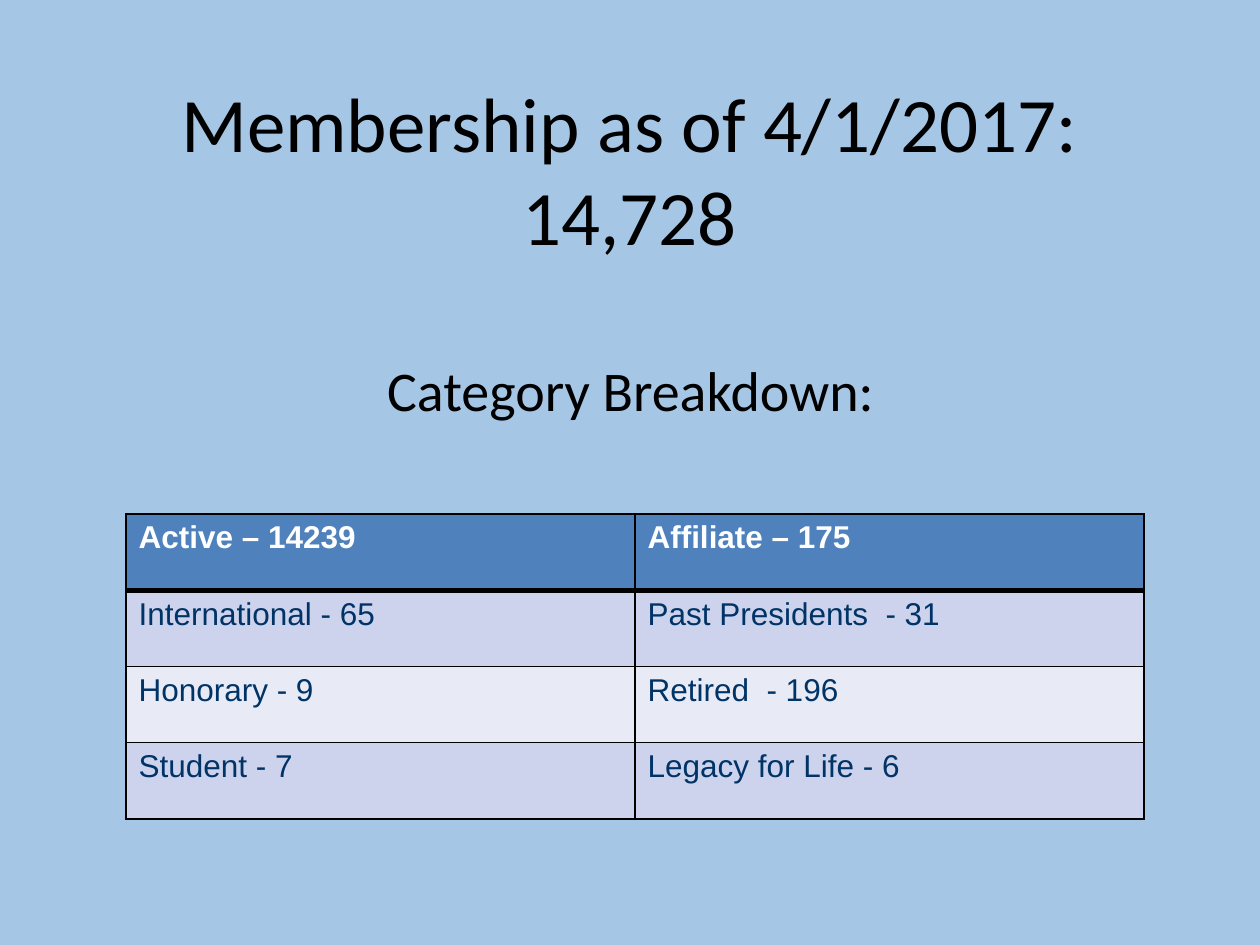
"""Build the membership slide with its category breakdown table."""
from dataclasses import dataclass

from lxml import etree
from pptx import Presentation
from pptx.dml.color import RGBColor
from pptx.enum.text import MSO_ANCHOR, PP_ALIGN
from pptx.oxml.ns import qn
from pptx.util import Inches, Pt

CENTER = PP_ALIGN.CENTER
MIDDLE = MSO_ANCHOR.MIDDLE


@dataclass(frozen=True)
class Theme:
    background: str = "A6C6E5"
    ink: str = "000000"
    header_ink: str = "FFFFFF"
    cell_ink: str = "003366"
    header_fill: str = "4F81BD"
    bands: tuple = ("E8EAF6", "CDD3EC")
    heading_font: str = "Calibri"
    table_font: str = "Arial"
    title_size: int = 44
    subtitle_size: int = 32
    table_size: int = 18


def set_font(p, name, size, color, bold=False):
    p.font.name = name
    p.font.size = Pt(size)
    p.font.bold = bold
    p.font.color.rgb = RGBColor.from_string(color)


def add_border(cell, side, width):
    ln = etree.SubElement(cell._tc.get_or_add_tcPr(), qn(f"a:{side}"), w=str(Pt(width)))
    fill = etree.SubElement(ln, qn("a:solidFill"))
    etree.SubElement(fill, qn("a:srgbClr"), val=theme.ink)


theme = Theme()
prs = Presentation()
prs.slide_width, prs.slide_height = Inches(10), Inches(7.5)
s = prs.slides.add_slide(prs.slide_layouts[6])
s.background.fill.solid()
s.background.fill.fore_color.rgb = RGBColor.from_string(theme.background)

headings = [
    ("Membership as of 4/1/2017:\v14,728", theme.title_size, (0.75, 0.25, 8.5, 2.17), -0.43),
    ("Category Breakdown:", theme.subtitle_size, (0.38, 2.5, 9.25, 1.17), 0),
]
for text, size, box, indent in headings:
    tf = s.shapes.add_textbox(*map(Inches, box)).text_frame
    tf.word_wrap = True
    tf.vertical_anchor = MIDDLE
    p = tf.paragraphs[0]
    p.text = text
    p.alignment = CENTER
    p._p.get_or_add_pPr().set("indent", str(Inches(indent)))
    set_font(p, theme.heading_font, size, theme.ink)

categories = [
    ("Active – 14239", "Affiliate – 175"),
    ("International - 65", "Past Presidents  - 31"),
    ("Honorary - 9", "Retired  - 196"),
    ("Student - 7", "Legacy for Life - 6"),
]
table = s.shapes.add_table(
    len(categories), 2, Inches(1), Inches(4.08), Inches(8.08), Inches(2.42)
).table
for i, labels in enumerate(categories):
    header = i == 0
    fill = theme.header_fill if header else theme.bands[i % 2]
    ink = theme.header_ink if header else theme.cell_ink
    for j, label in enumerate(labels):
        cell = table.cell(i, j)
        cell.text = label
        set_font(cell.text_frame.paragraphs[0], theme.table_font, theme.table_size, ink, header)
        widths = {"lnL": 1, "lnR": 1, "lnT": 3 if i == 1 else 1, "lnB": 3 if header else 1}
        for side, width in widths.items():
            add_border(cell, side, width)
        cell.fill.solid()
        cell.fill.fore_color.rgb = RGBColor.from_string(fill)

prs.save("out.pptx")
